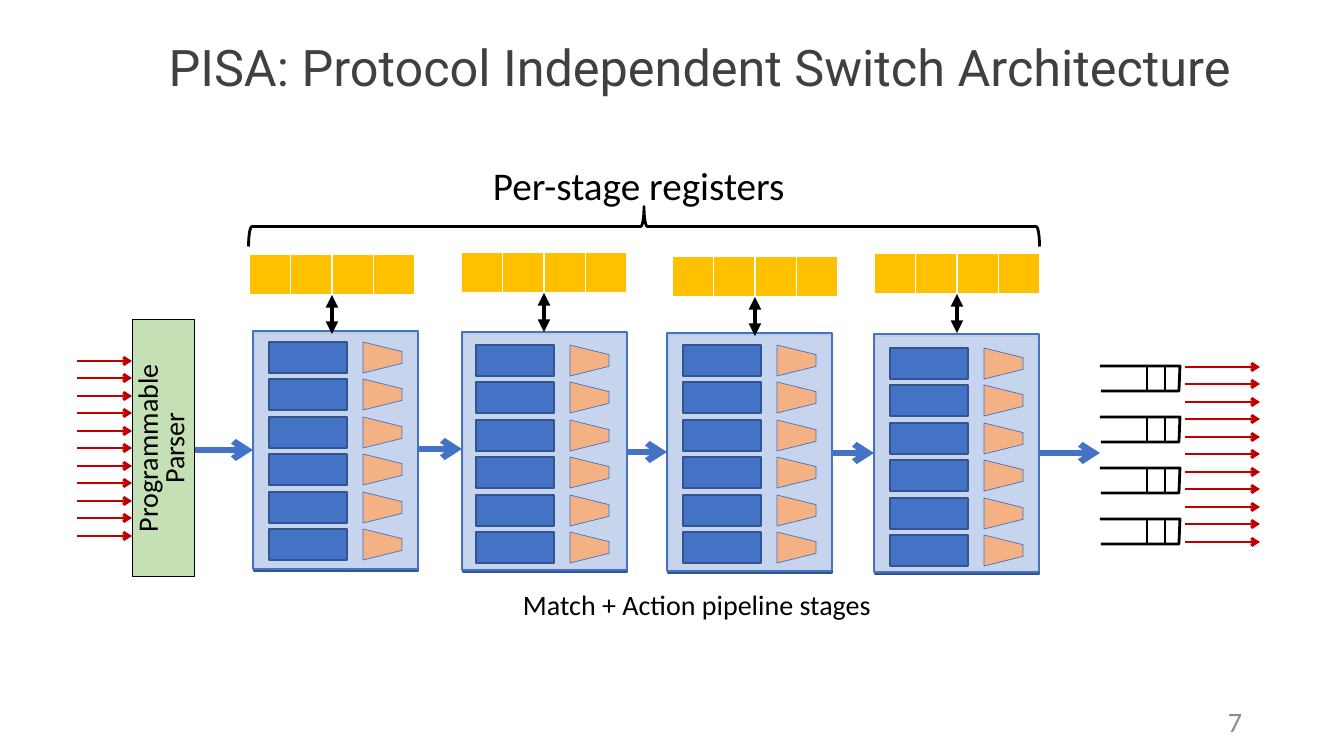
import pptx
import pptx.dml.color
import pptx.enum.shapes
import pptx.enum.text
import pptx.oxml.ns
import pptx.util
import lxml.etree

PX = 9071  # EMU in one px
COLORS = {
    "black": "000000", "white": "FFFFFF", "title": "404040", "number": "8C8C8C",
    "blue": "4472C4", "navy": "325491", "orange": "F4B183", "green": "C5E0B4",
    "gold": "FFC000", "red": "C00000",
}
SHAPES = pptx.enum.shapes.MSO_SHAPE
ALIGN = pptx.enum.text.PP_ALIGN
ANCHOR = pptx.enum.text.MSO_ANCHOR
QN = pptx.oxml.ns.qn


def add_box(preset, left, top, width, height, line, points, fill=None, rotation=0):
    box = slide.shapes.add_shape(preset, left * PX, top * PX, width * PX, height * PX)
    box.rotation = rotation
    box.shadow.inherit = False
    if fill:
        box.fill.solid()
        box.fill.fore_color.rgb = pptx.dml.color.RGBColor.from_string(COLORS[fill])
    else:
        box.fill.background()
    box.line.color.rgb = pptx.dml.color.RGBColor.from_string(COLORS[line])
    box.line.width = pptx.util.Pt(points)
    return box


def write(box, text, size, color="black", font="Calibri", align=ALIGN.LEFT,
          anchor=ANCHOR.TOP, spacing=None, insets=(12, 6)):
    """Fill a shape with text, one paragraph a line; insets are side and top in px."""
    frame = box.text_frame
    frame.word_wrap = True
    frame.auto_size = pptx.enum.text.MSO_AUTO_SIZE.NONE
    frame.vertical_anchor = anchor
    frame.margin_left = frame.margin_right = insets[0] * PX
    frame.margin_top = frame.margin_bottom = insets[1] * PX
    frame.text = text
    for para in frame.paragraphs:
        para.alignment = align
        para.line_spacing = spacing
        for span in para.runs:
            span.font.size = pptx.util.Pt(size)
            span.font.name = font
            span.font.color.rgb = pptx.dml.color.RGBColor.from_string(COLORS[color])


deck = pptx.Presentation()
deck.slide_width = 1344 * PX
deck.slide_height = 756 * PX
slide = deck.slides.add_slide(deck.slide_layouts[5])

title = slide.shapes.title
title.left, title.top, title.width, title.height = 93 * PX, -3 * PX, 1214 * PX, 146 * PX
write(title, "PISA: Protocol Independent Switch Architecture", 36, color="title",
      font="Roboto", align=ALIGN.CENTER, anchor=ANCHOR.MIDDLE, spacing=0.9, insets=(10, 5))

# Each line: start x, start y, end x, end y, colour, points, head, tail
lines = []

# Pipeline stages: panel, match blocks with their actions, register row
stages = [  # panel x, y; first block x, y; register x, y
    (253, 331, 269, 342, 249, 254),
    (462, 332, 476, 345, 461, 252),
    (667, 333, 683, 345, 672, 256),
    (874, 334, 890, 348, 874, 253),
]
for panel_x, panel_y, block_x, first_y, register_x, register_y in stages:
    add_box(SHAPES.RECTANGLE, panel_x + 1, panel_y + 2, 164, 238, "navy", 1, "blue")
    panel = add_box(SHAPES.RECTANGLE, panel_x, panel_y, 165, 238, "blue", 1, "white")
    tint = panel.fill._xPr.find(".//" + QN("a:srgbClr"))
    lxml.etree.SubElement(tint, QN("a:alpha"), val="70000")

    for row in range(6):
        block_y = first_y + row * 75 // 2
        add_box(SHAPES.RECTANGLE, block_x, block_y, 78, 31, "navy", 1, "blue")
        action = add_box(SHAPES.TRAPEZOID, block_x + 98, block_y - 4, 31, 39,
                         "blue", 0.5, "orange", rotation=90)
        action.adjustments[0] = 0.31

    registers = slide.shapes.add_table(
        1, 4, register_x * PX, register_y * PX, 166 * PX, 41 * PX).table
    for cell in registers.iter_cells():
        cell.fill.solid()
        cell.fill.fore_color.rgb = pptx.dml.color.RGBColor.from_string(COLORS["gold"])
    middle = register_x + 83
    lines.append((middle, register_y + 41, middle, register_y + 80,
                  "black", 3, "triangle", "triangle"))

# Arrows between the parser, the stages and the queues
for start_x, end_x, y in [(194, 253, 450), (418, 462, 449), (627, 667, 452),
                          (833, 874, 453), (1039, 1100, 453)]:
    lines.append((start_x, y, end_x, y, "blue", 4.5, None, "arrow"))

# Packets in and out
for start_x, end_x, first_y in [(77, 132, 361), (1185, 1260, 367)]:
    for packet in range(11):
        y = first_y + packet * 35 // 2
        lines.append((start_x, y, end_x, y, "red", 2, None, "arrow"))

# Output queues
for queue_y in range(366, 520, 51):
    outline = slide.shapes.build_freeform(1100, queue_y, scale=PX)
    outline.add_line_segments(
        [(1180, queue_y), (1179, queue_y + 25), (1101, queue_y + 25)], close=False)
    queue = outline.convert_to_shape()
    queue.shadow.inherit = False
    queue.fill.background()
    queue.line.color.rgb = pptx.dml.color.RGBColor.from_string(COLORS["black"])
    queue.line.width = pptx.util.Pt(2)
    for x in (1147, 1165):
        lines.append((x, queue_y, x, queue_y + 25, "black", 2, None, None))

for start_x, start_y, end_x, end_y, color, points, head, tail in lines:
    line = slide.shapes.add_connector(
        pptx.enum.shapes.MSO_CONNECTOR.STRAIGHT,
        start_x * PX, start_y * PX, end_x * PX, end_y * PX)
    line.line.color.rgb = pptx.dml.color.RGBColor.from_string(COLORS[color])
    line.line.width = pptx.util.Pt(points)
    properties = line._element.spPr
    stroke = properties.find(QN("a:ln"))
    for tag, kind in (("a:headEnd", head), ("a:tailEnd", tail)):
        if kind:
            lxml.etree.SubElement(stroke, QN(tag), type=kind)
    lxml.etree.SubElement(properties, QN("a:effectLst"))

parser = add_box(SHAPES.RECTANGLE, 35, 417, 257, 62, "black", 0.5, "green", rotation=270)
write(parser, "Programmable\nParser", 20, align=ALIGN.CENTER, anchor=ANCHOR.MIDDLE,
      spacing=pptx.util.Pt(19), insets=(17, 9))
add_box(SHAPES.RIGHT_BRACE, 624, -169, 40, 791, "black", 2, rotation=270)

stages_label = slide.shapes.add_textbox(511 * PX, 581 * PX, 380 * PX, 46 * PX)
write(stages_label, "Match + Action pipeline stages", 20)
registers_label = slide.shapes.add_textbox(481 * PX, 155 * PX, 342 * PX, 59 * PX)
write(registers_label, "Per-stage registers", 28)
page_number = slide.shapes.add_textbox(950 * PX, 701 * PX, 302 * PX, 40 * PX)
write(page_number, "7", 20, color="number", align=ALIGN.RIGHT, anchor=ANCHOR.MIDDLE,
      insets=(10, 5))

deck.save("out.pptx")
